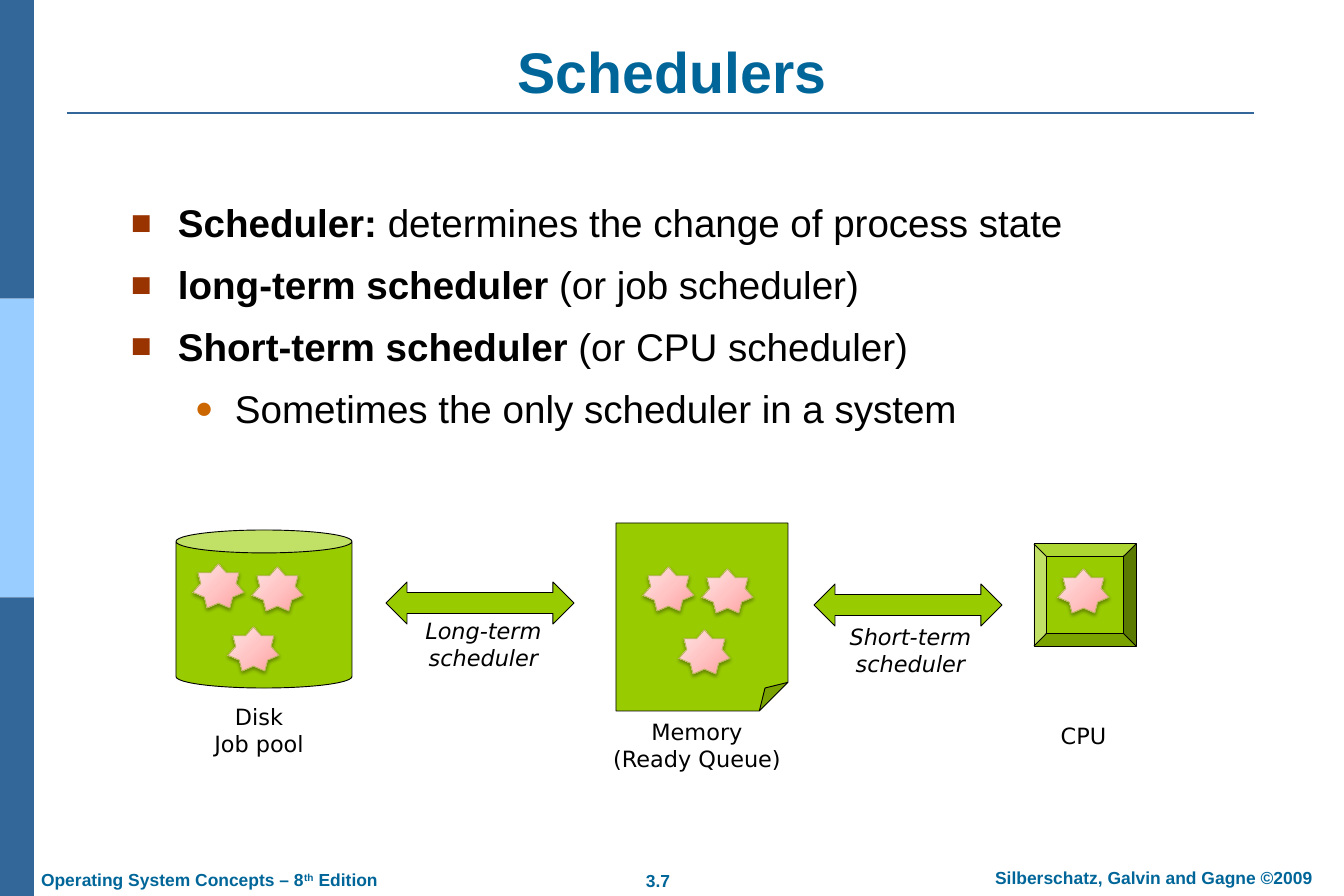
import copy

import pptx
import pptx.util
from pptx.dml.color import RGBColor
from pptx.enum.shapes import MSO_CONNECTOR, MSO_SHAPE
from pptx.enum.text import MSO_ANCHOR, MSO_AUTO_SIZE, PP_ALIGN
from pptx.oxml.ns import qn
from pptx.oxml.xmlchemy import OxmlElement

EMU_PER_PX = 914400 / 89.6
SLIDE_WIDTH, SLIDE_HEIGHT = 1344, 896

WHITE = RGBColor(0xFF, 0xFF, 0xFF)
BLACK = RGBColor(0, 0, 0)
NAVY = RGBColor(0x33, 0x66, 0x99)
SKY = RGBColor(0x99, 0xCC, 0xFF)
TEAL = RGBColor(0x00, 0x66, 0x99)
GREEN = RGBColor(0x99, 0xCC, 0x00)
RUST = RGBColor(0x99, 0x33, 0x00)
ORANGE = RGBColor(0xCC, 0x66, 0x00)
OLIVE = RGBColor(0xB7, 0xB7, 0x58)
PINKS = [RGBColor(0xFF, 0xA0, 0xA0), RGBColor(0xFF, 0xC5, 0xC5), RGBColor(0xFF, 0xE3, 0xE3)]

# Bullet style: character, colour, size in %, left margin and hanging indent in px
SQUARE = ("■", RUST, 90, 47, 47)
DOT = ("●", ORANGE, 80, 104, 40)

BULLETS = [
    (SQUARE, "Scheduler:", " determines the change of process state"),
    (SQUARE, "long-term scheduler", " (or job scheduler)"),
    (SQUARE, "Short-term scheduler", " (or CPU scheduler)"),
    (DOT, "", "Sometimes the only scheduler in a system"),
]
PROCESSES = [(193, 564), (252, 567), (228, 627),
             (643, 567), (702, 569), (679, 630), (1058, 569)]
# Text, box in px, italic
LABELS = [
    ("Disk\nJob pool", (203, 699, 112, 64), False),
    ("Memory\n(Ready Queue)", (602, 714, 190, 64), False),
    ("CPU", (1051, 718, 65, 36), False),
    ("Long-term\nscheduler", (412, 613, 143, 64), True),
    ("Short-term\nscheduler", (835, 619, 151, 64), True),
]


def px(length):
    return pptx.util.Emu(round(length * EMU_PER_PX))


def add_element(parent, tag, **attributes):
    element = OxmlElement(tag)
    for name, value in attributes.items():
        element.set(name, str(value))
    parent.append(element)
    return element


def add_shape(slide, kind, box, color, line_color=None):
    shape = slide.shapes.add_shape(kind, *map(px, box))
    shape.shadow.inherit = False
    shape.fill.solid()
    shape.fill.fore_color.rgb = color
    if line_color is None:
        shape.line.fill.background()
    else:
        shape.line.color.rgb = line_color
        shape.line.width = pptx.util.Pt(0.75)
    return shape


def add_process(slide, left, top):
    star = add_shape(slide, MSO_SHAPE.STAR_7_POINT, (left, top, 51, 44), PINKS[0], OLIVE)
    star.fill.gradient()
    star.fill.gradient_angle = 135
    properties = star._element.spPr
    stop_list = properties.find(qn("a:gradFill")).find(qn("a:gsLst"))
    stop_list.insert(1, copy.deepcopy(stop_list[0]))
    for index, (stop, color) in enumerate(zip(star.fill.gradient_stops, PINKS)):
        stop.position = index / 2
        stop.color.rgb = color
    # Soft shadow straight below
    shadow = add_element(properties.find(qn("a:effectLst")), "a:outerShdw",
                         blurRad=pptx.util.Pt(3.1), dist=pptx.util.Pt(1.8),
                         dir=5400000, rotWithShape=0)
    shadow_color = add_element(shadow, "a:srgbClr", val=BLACK)
    add_element(shadow_color, "a:alpha", val=35000)


def add_frame(slide, box, wrap, insets):
    frame = slide.shapes.add_textbox(*map(px, box)).text_frame
    frame.word_wrap = wrap
    frame.margin_left = frame.margin_right = px(insets[0])
    frame.margin_top = frame.margin_bottom = px(insets[1])
    return frame


def format_font(font, name, size, color, bold=False, italic=False):
    font.name = name
    font.size = pptx.util.Pt(size)
    font.color.rgb = color
    font.bold = bold
    font.italic = italic


def add_heading(slide, text, box, size=14, align=PP_ALIGN.CENTER, wrap=True):
    frame = add_frame(slide, box, wrap, (13, 6))
    frame.text = text
    paragraph = frame.paragraphs[0]
    paragraph.alignment = align
    format_font(paragraph.runs[0].font, "Arial", size, TEAL, bold=True)
    return frame


def add_label(slide, text, box, italic):
    frame = add_frame(slide, box, False, (9, 4))
    frame.auto_size = MSO_AUTO_SIZE.SHAPE_TO_FIT_TEXT
    frame.text = text
    for paragraph in frame.paragraphs:
        paragraph.alignment = PP_ALIGN.CENTER
        format_font(paragraph.runs[0].font, "DejaVu Sans", 18, BLACK, italic=italic)


def set_bullet(paragraph, style):
    character, color, percent, margin, hanging = style
    properties = paragraph._p.get_or_add_pPr()
    properties.set("marL", str(px(margin)))
    properties.set("indent", str(-px(hanging)))
    add_element(add_element(properties, "a:buClr"), "a:srgbClr", val=color)
    add_element(properties, "a:buSzPct", val=percent * 1000)
    add_element(properties, "a:buFont", typeface="Arial")
    add_element(properties, "a:buChar", char=character)


def add_bullets(slide, bullets, box):
    frame = add_frame(slide, box, True, (13, 10))
    for index, (style, term, text) in enumerate(bullets):
        paragraph = frame.add_paragraph() if index else frame.paragraphs[0]
        set_bullet(paragraph, style)
        if index:
            paragraph.space_before = pptx.util.Pt(12.5)
        if style is DOT:
            paragraph.level = 1
        for words, bold in ((term, True), (text, False)):
            if words:
                run = paragraph.add_run()
                run.text = words
                format_font(run.font, "Arial", 31, BLACK, bold=bold)


def add_rule(slide, left, right, top):
    rule = slide.shapes.add_connector(MSO_CONNECTOR.STRAIGHT,
                                      px(left), px(top), px(right), px(top))
    rule.line.color.rgb = NAVY
    rule.line.width = pptx.util.Pt(1.5)
    add_element(rule._element.spPr, "a:effectLst")


def add_footer(slide):
    add_heading(slide, "3.7", (627, 864, 62, 34), wrap=False)
    add_heading(slide, "Silberschatz, Galvin and Gagne ©2009", (964, 861, 380, 34))
    frame = add_heading(slide, "Operating System Concepts – 8", (28, 863, 366, 34),
                        align=PP_ALIGN.LEFT, wrap=False)
    for text, baseline in (("th", 30000), (" Edition", 0)):
        run = frame.paragraphs[0].add_run()
        run.text = text
        format_font(run.font, "Arial", 14, TEAL, bold=True)
        run._r.get_or_add_rPr().set("baseline", str(baseline))


def main():
    presentation = pptx.Presentation()
    presentation.slide_width = px(SLIDE_WIDTH)
    presentation.slide_height = px(SLIDE_HEIGHT)
    slide = presentation.slides.add_slide(presentation.slide_layouts[6])
    slide.background.fill.solid()
    slide.background.fill.fore_color.rgb = WHITE

    # Side band in three equal parts, and the title rule
    part_height = SLIDE_HEIGHT / 3
    for index, color in enumerate((NAVY, SKY, NAVY)):
        add_shape(slide, MSO_SHAPE.RECTANGLE, (0, index * part_height, 34, part_height), color)
    add_rule(slide, 67, 1254, 113)
    add_footer(slide)

    # Title and bullets
    title = add_heading(slide, "Schedulers", (67, 36, 1210, 75), size=46)
    title.vertical_anchor = MSO_ANCHOR.BOTTOM
    add_bullets(slide, BULLETS, (118, 189, 1098, 341))

    # Disk, memory and CPU with their processes
    disk = add_shape(slide, MSO_SHAPE.CAN, (176, 530, 176, 158), GREEN, BLACK)
    disk.adjustments[0] = 0.145
    add_shape(slide, MSO_SHAPE.FOLDED_CORNER, (616, 523, 172, 188), GREEN, BLACK)
    add_shape(slide, MSO_SHAPE.BEVEL, (1034, 544, 102, 102), GREEN, BLACK)
    for left, top in PROCESSES:
        add_process(slide, left, top)

    # Scheduler arrows and labels
    for left, top in ((386, 582), (814, 584)):
        add_shape(slide, MSO_SHAPE.LEFT_RIGHT_ARROW, (left, top, 188, 42), GREEN, BLACK)
    for text, box, italic in LABELS:
        add_label(slide, text, box, italic)

    presentation.save("out.pptx")


if __name__ == "__main__":
    main()
